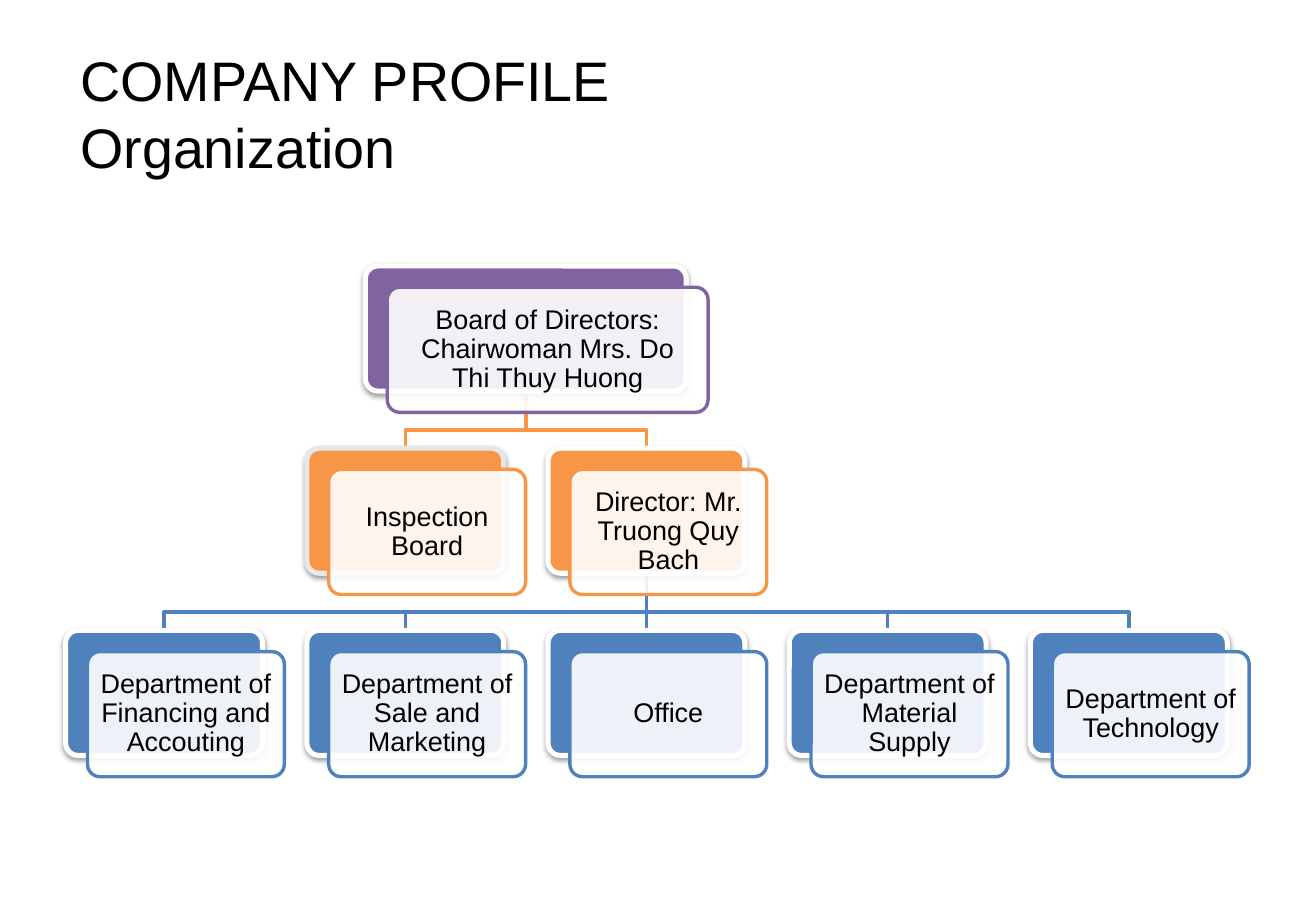
"""Build the company organization chart slide."""
from lxml import etree
from pptx import Presentation
from pptx import util as u
from pptx.dml.color import RGBColor
from pptx.enum import shapes, text
from pptx.oxml.ns import qn

COLORS = {"board": "8064A2", "management": "F79646", "department": "4F81BD",
          "white": "FFFFFF", "gray": "E7E7E7", "black": "000000"}
CARD_W, BOARD_W, CARD_H = 1.62, 2.64, 1.03
FIRST_CENTER, COLUMN_STEP = 1.35, 7.94 / 4
FIRST_TOP, ROW_STEP = 2.19, 1.5
BEND = 0.32

CARDS = [
    ("Board of Directors: Chairwoman Mrs. Do Thi Thuy Huong", 1.5, 0, BOARD_W, "board", "white"),
    ("Inspection Board", 1, 1, CARD_W, "management", "gray"),
    ("Director: Mr. Truong Quy Bach", 2, 1, CARD_W, "management", "white"),
    ("Department of Financing and Accouting", 0, 2, CARD_W, "department", "white"),
    ("Department of Sale and Marketing", 1, 2, CARD_W, "department", "white"),
    ("Office", 2, 2, CARD_W, "department", "white"),
    ("Department of Material Supply", 3, 2, CARD_W, "department", "white"),
    ("Department of Technology", 4, 2, CARD_W, "department", "white"),
]
BRANCHES = [(2, 4, 1), (2, 3, 1), (2, 1, 1), (2, 0, 1), (1.5, 2, 0), (1.5, 1, 0)]

prs = Presentation()
prs.slide_width, prs.slide_height = u.Inches(10.83), u.Inches(7.5)
slide = prs.slides.add_slide(prs.slide_layouts[6])


def add_card(x, y, w, fill, line, width):
    sp = slide.shapes.add_shape(shapes.MSO_SHAPE.ROUNDED_RECTANGLE,
                                u.Inches(x), u.Inches(y), u.Inches(w), u.Inches(CARD_H))
    sp.adjustments[0] = 0.1
    sp.shadow.inherit = False
    sp.fill.solid()
    sp.fill.fore_color.rgb = RGBColor.from_string(COLORS[fill])
    sp.line.color.rgb = RGBColor.from_string(COLORS[line])
    sp.line.width = u.Pt(width)
    return sp


def write(tf, words, size, inset_x, inset_y):
    tf.word_wrap = True
    tf.vertical_anchor = text.MSO_ANCHOR.MIDDLE
    tf.margin_left = tf.margin_right = u.Inches(inset_x)
    tf.margin_top = tf.margin_bottom = u.Inches(inset_y)
    tf.text = words
    p = tf.paragraphs[0]
    for r in p.runs:
        r.font.size = u.Pt(size)
        r.font.name = "Arial"
        r.font.color.rgb = RGBColor.from_string(COLORS["black"])
    return p


title = slide.shapes.add_textbox(u.Inches(0.54), u.Inches(0.3), u.Inches(6.68), u.Inches(1.25))
write(title.text_frame, "COMPANY PROFILE\vOrganization", 33, 0.12, 0.06)

for start, end, row in BRANCHES:
    x1, x2 = (FIRST_CENTER + c * COLUMN_STEP for c in (start, end))
    y1 = FIRST_TOP + row * ROW_STEP + CARD_H
    y2 = FIRST_TOP + (row + 1) * ROW_STEP
    path_points = [(x1, y1 + BEND), (x2, y1 + BEND), (x2, y2)]
    builder = slide.shapes.build_freeform(u.Inches(x1), u.Inches(y1))
    builder.add_line_segments([(u.Inches(x), u.Inches(y)) for x, y in path_points], close=False)
    sp = builder.convert_to_shape()
    sp.shadow.inherit = False
    sp.fill.background()
    sp.line.color.rgb = RGBColor.from_string(COLORS["department" if row else "management"])
    sp.line.width = u.Pt(2)

backs = {}
for words, column, row, w, color, edge in CARDS:
    x = FIRST_CENTER + column * COLUMN_STEP - w / 2
    y = FIRST_TOP + row * ROW_STEP

    back = add_card(x, y, w, color, edge, 3)
    effects = back._element.spPr.find(qn("a:effectLst"))
    shadow = etree.SubElement(effects, qn("a:outerShdw"), blurRad=str(u.Pt(3.1)),
                              dist=str(u.Pt(1.6)), dir="5400000", rotWithShape="0")
    shade = etree.SubElement(shadow, qn("a:srgbClr"), val=COLORS["black"])
    etree.SubElement(shade, qn("a:alpha"), val="38000")
    backs[words] = back

    front = add_card(x + 0.18, y + 0.175, w, "white", color, 2)
    tint = front._element.spPr.find(qn("a:solidFill")).find(qn("a:srgbClr"))
    etree.SubElement(tint, qn("a:alpha"), val="90000")
    p = write(front.text_frame, words, 16, 0.07, 0.07)
    p.alignment = text.PP_ALIGN.CENTER
    p.line_spacing = 0.9

stem = slide.shapes.add_connector(shapes.MSO_CONNECTOR.STRAIGHT, 0, 0, 0, 0)
stem.begin_connect(backs["Director: Mr. Truong Quy Bach"], 2)
stem.end_connect(backs["Office"], 0)
stem.line.color.rgb = RGBColor.from_string(COLORS["department"])
stem.line.width = u.Pt(2)
etree.SubElement(stem._element.spPr, qn("a:effectLst"))
slide.shapes._spTree.insert(2, stem._element)

prs.save("out.pptx")
